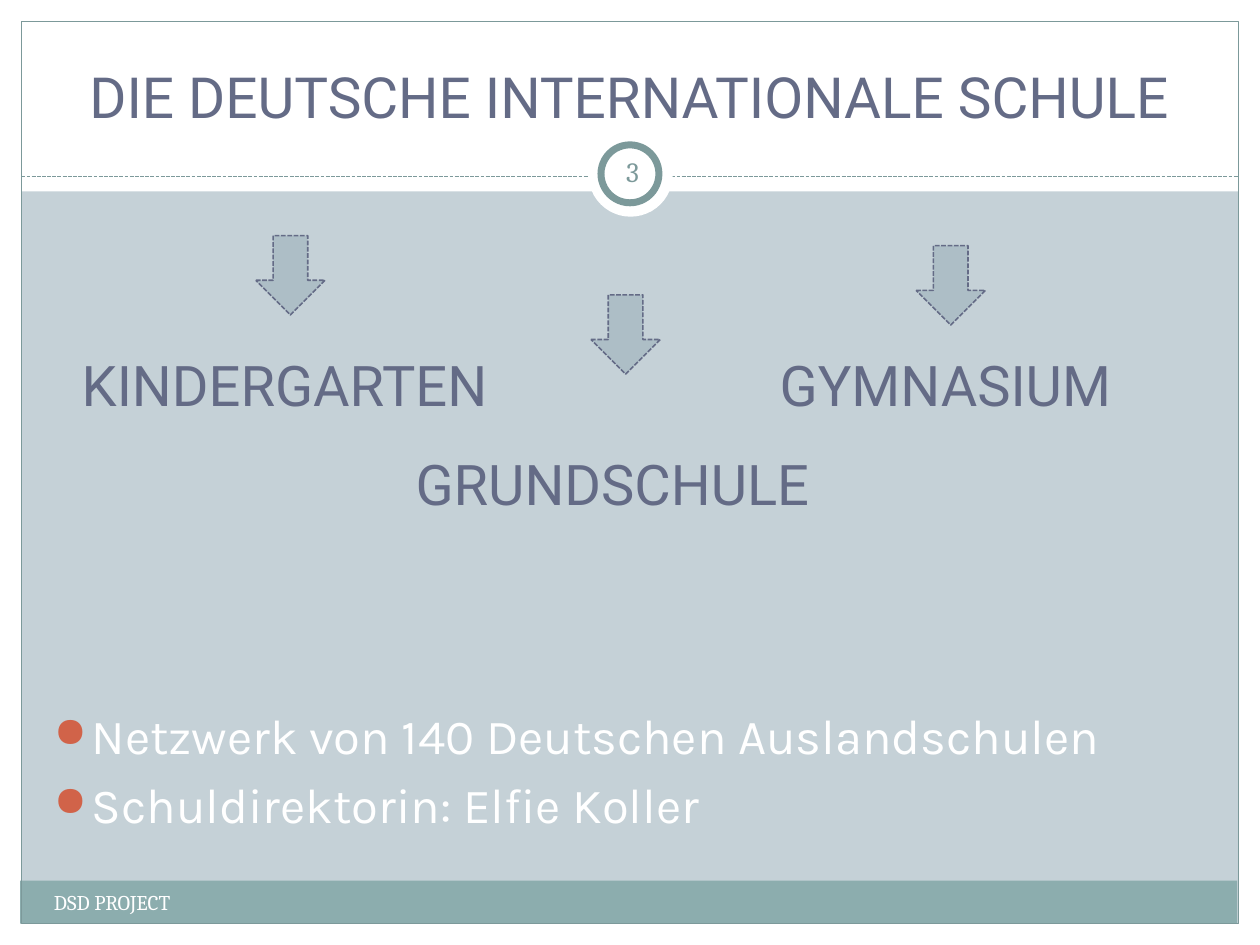
from lxml import etree
from pptx import Presentation
from pptx.dml.color import RGBColor
from pptx.enum.dml import MSO_LINE
from pptx.enum.shapes import MSO_CONNECTOR, MSO_SHAPE
from pptx.enum.text import MSO_ANCHOR, PP_ALIGN
from pptx.oxml.ns import qn
from pptx.util import Pt

RECT, OVAL, ARROW = MSO_SHAPE.RECTANGLE, MSO_SHAPE.OVAL, MSO_SHAPE.DOWN_ARROW
STRAIGHT = MSO_CONNECTOR.STRAIGHT
DASH = MSO_LINE.SQUARE_DOT
LEFT, CENTER = PP_ALIGN.LEFT, PP_ALIGN.CENTER
TOP, MIDDLE, BOTTOM = MSO_ANCHOR.TOP, MSO_ANCHOR.MIDDLE, MSO_ANCHOR.BOTTOM

WHITE = RGBColor(0xFF, 0xFF, 0xFF)
MIST = RGBColor(0xC5, 0xD1, 0xD7)
TEAL = RGBColor(0x8C, 0xAD, 0xAE)
PINE = RGBColor(0x7C, 0x99, 0x9A)
SLATE = RGBColor(0x64, 0x6B, 0x86)
STEEL = RGBColor(0xAD, 0xBE, 0xC6)
RUST = RGBColor(0xD1, 0x63, 0x49)

HEAD, BODY, NOTE = "Roboto", "Karla", "Cambria"
SCALE = 9144


def emu(*sizes):
    return [size * SCALE for size in sizes]


class Deck:
    """Draws styled elements on the current slide, 100 px to the inch."""

    def __init__(self, width, height):
        self.prs = Presentation()
        self.prs.slide_width, self.prs.slide_height = emu(width, height)

    def page(self, color):
        self.slide = self.prs.slides.add_slide(self.prs.slide_layouts[6])
        fill = self.slide.background.fill
        fill.solid()
        fill.fore_color.rgb = color

    def stroke(self, line, color, width, dash=None):
        line.color.rgb = color
        line.width = Pt(width)
        if dash:
            line.dash_style = dash

    def shape(self, kind, box, fill=None, line=None, width=0.75, dash=None):
        shape = self.slide.shapes.add_shape(kind, *emu(*box))
        shape.shadow.inherit = False
        if fill is None:
            shape.fill.background()
        else:
            shape.fill.solid()
            shape.fill.fore_color.rgb = fill
        if line is None:
            shape.line.fill.background()
        else:
            self.stroke(shape.line, line, width, dash)

    def rule(self, ends, color):
        line = self.slide.shapes.add_connector(STRAIGHT, *emu(*ends))
        self.stroke(line.line, color, 0.75, DASH)
        etree.SubElement(line._element.spPr, qn("a:effectLst"))

    def text(self, box, words, font, size, color, align=LEFT, anchor=TOP, inset=None):
        frame = self.slide.shapes.add_textbox(*emu(*box)).text_frame
        frame.word_wrap = True
        frame.vertical_anchor = anchor
        if inset is not None:
            frame.margin_left = frame.margin_right = inset * SCALE
            frame.margin_top = frame.margin_bottom = inset * SCALE
        frame.text = words
        for para in frame.paragraphs:
            para.alignment = align
            for run in para.runs:
                run.font.name = font
                run.font.size = Pt(size)
                run.font.color.rgb = color
        return frame

    def bullets(self, box, items, font, size, color, dot):
        frame = self.text(box, "\n".join(items), font, size, color)
        for para in frame.paragraphs:
            para.space_before = Pt(size * 0.2)
            props = para._p.get_or_add_pPr()
            props.set("marL", str(30 * SCALE))
            props.set("indent", str(-30 * SCALE))
            tint = etree.SubElement(props, qn("a:buClr"))
            etree.SubElement(tint, qn("a:srgbClr"), val=str(dot))
            etree.SubElement(props, qn("a:buSzPct"), val="85000")
            etree.SubElement(props, qn("a:buChar"), char="●")


def main():
    deck = Deck(1000, 750)
    deck.page(MIST)

    for box in ((0, 733, 1000, 17), (0, 0, 1000, 152),
                (0, 0, 17, 750), (983, 0, 17, 750)):
        deck.shape(RECT, box, WHITE)
    deck.shape(RECT, (16, 699, 966, 34), TEAL)
    deck.shape(RECT, (17, 17, 966, 716), line=PINE)
    deck.rule((17, 140, 983, 140), PINE)
    deck.shape(OVAL, (467, 105, 67, 67), WHITE)
    deck.shape(OVAL, (477, 115, 46, 46), WHITE, PINE, 4)

    deck.text((33, 25, 933, 83), "DIE DEUTSCHE INTERNATIONALE SCHULE",
              HEAD, 32.4, SLATE, CENTER, BOTTOM)
    deck.text((33, 701, 392, 40), "DSD PROJECT", NOTE, 12, WHITE)
    deck.text((477, 112, 50, 48), "3", NOTE, 16, PINE, CENTER, MIDDLE, 5)
    deck.bullets((33, 555, 930, 112),
                 ("Netzwerk von 140 Deutschen Auslandschulen",
                  "Schuldirektorin: Elfie Koller"),
                 BODY, 28, WHITE, RUST)

    for x, y in ((203, 187), (469, 234), (727, 195)):
        deck.shape(ARROW, (x, y, 55, 63), STEEL, SLATE, 0.9, DASH)
    for x, y, width, name in ((55, 273, 398, "KINDERGARTEN"),
                              (320, 352, 398, "GRUNDSCHULE"),
                              (609, 273, 344, "GYMNASIUM")):
        deck.text((x, y, width, 64), name, HEAD, 32, SLATE)

    deck.prs.save("out.pptx")


if __name__ == "__main__":
    main()
